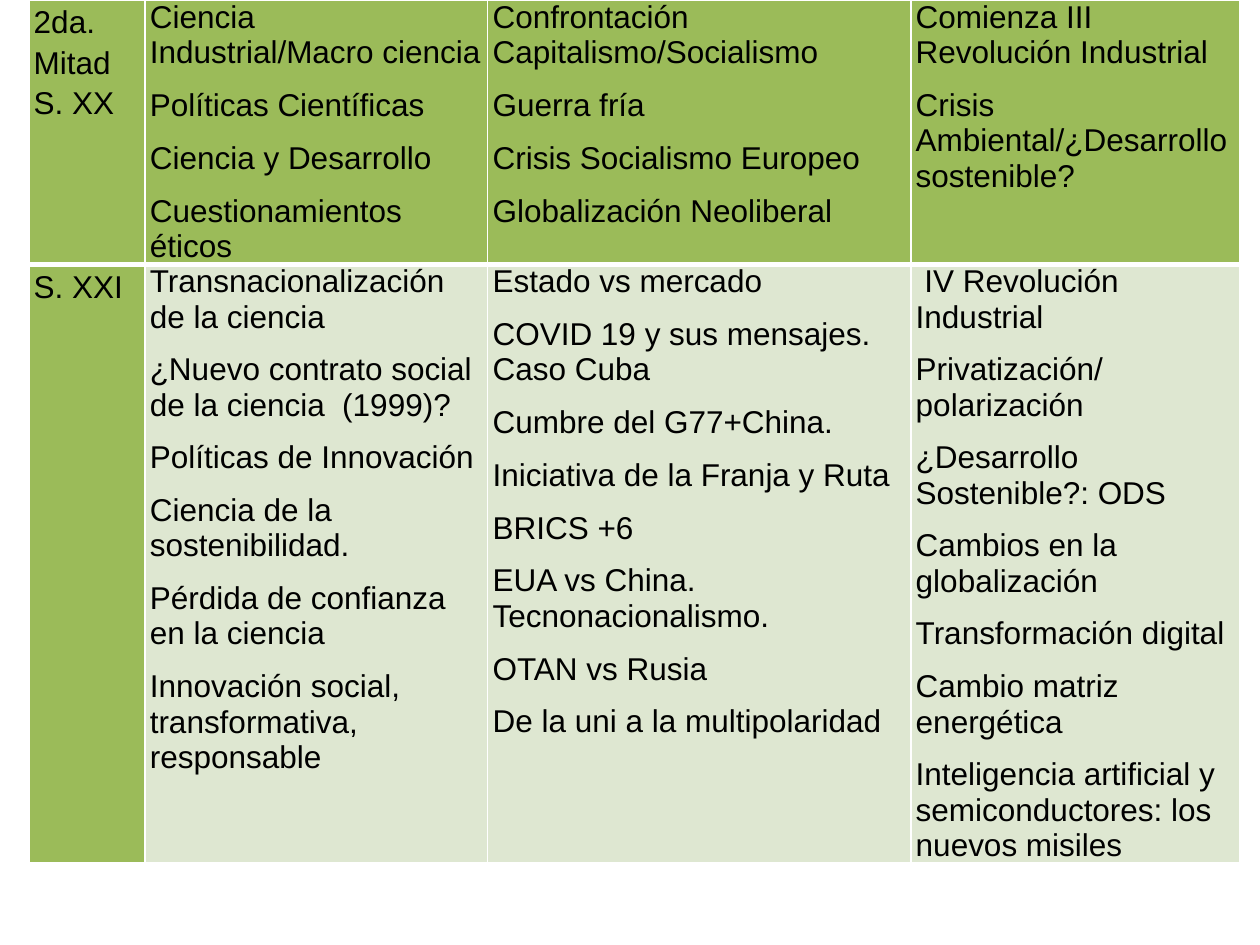
from dataclasses import dataclass

from lxml.etree import SubElement
from pptx import Presentation
from pptx.dml.color import RGBColor
from pptx.oxml.ns import qn
from pptx.util import Cm, Pt


@dataclass(frozen=True)
class Theme:
    """Colours, type and line sizes of the slide."""
    font: str = "Arial"
    size: int = 18
    text: str = "000000"
    strong: str = "9BBB59"
    pale: str = "DEE7D1"
    border: str = "FFFFFF"
    thin: int = 1
    thick: int = 3


THEME = Theme()
COL_WIDTHS = (2.34, 6.91, 8.53, 6.63)
ROW_HEIGHTS = (5.13, 11.43)
PERIODS = (
    (
        ("2da. Mitad S. XX",),
        ("Ciencia Industrial/Macro ciencia", "Políticas Científicas",
         "Ciencia y Desarrollo", "Cuestionamientos éticos"),
        ("Confrontación Capitalismo/Socialismo", "Guerra fría",
         "Crisis Socialismo Europeo", "Globalización Neoliberal"),
        ("Comienza III Revolución Industrial",
         "Crisis Ambiental/¿Desarrollo sostenible?"),
    ),
    (
        ("S. XXI",),
        ("Transnacionalización de la ciencia",
         "¿Nuevo contrato social de la ciencia  (1999)?",
         "Políticas de Innovación", "Ciencia de la sostenibilidad.",
         "Pérdida de confianza en la ciencia",
         "Innovación social, transformativa, responsable"),
        ("Estado vs mercado", "COVID 19 y sus mensajes. Caso Cuba",
         "Cumbre del G77+China.", "Iniciativa de la Franja y Ruta",
         "BRICS +6", "EUA vs China. Tecnonacionalismo.",
         "OTAN vs Rusia", "De la uni a la multipolaridad"),
        (" IV Revolución Industrial", "Privatización/polarización",
         "¿Desarrollo Sostenible?: ODS", "Cambios en la globalización",
         "Transformación digital", "Cambio matriz energética",
         "Inteligencia artificial y semiconductores: los nuevos misiles"),
    ),
)


def set_attrs(obj, values):
    """Set each named format value on an object."""
    for name, value in values.items():
        setattr(obj, name, value)


def set_borders(cell, widths):
    """Draw the cell edges with the given widths in points."""
    tc_pr = cell._tc.get_or_add_tcPr()
    for side, width in widths.items():
        ln = SubElement(tc_pr, qn(f"a:ln{side}"), w=str(Pt(width)))
        fill = SubElement(ln, qn("a:solidFill"))
        SubElement(fill, qn("a:srgbClr"), val=THEME.border)


def fill_cell(cell, lines, color, spacing, borders):
    """Write one paragraph per line and format the cell."""
    set_attrs(cell, {"margin_left": Cm(0.1), "margin_right": Cm(0.1),
                     "margin_top": 0, "margin_bottom": 0})
    set_borders(cell, borders)
    cell.fill.solid()
    cell.fill.fore_color.rgb = RGBColor.from_string(color)
    tf = cell.text_frame
    tf.text = "\n".join(lines)
    for p in tf.paragraphs:
        set_attrs(p, {"line_spacing": spacing, "space_after": Pt(10)})
        for r in p.runs:
            set_attrs(r.font, {"name": THEME.font, "size": Pt(THEME.size)})
            r.font.color.rgb = RGBColor.from_string(THEME.text)


def add_period_table(slide, left, top, width, height):
    """Place the table of historical periods in the given box."""
    s = slide.shapes.add_table(len(PERIODS), len(COL_WIDTHS),
                               left, top, width, height)
    table = s.table
    set_attrs(table, {"first_row": False, "horz_banding": False})
    for col, size in zip(table.columns, COL_WIDTHS):
        col.width = Cm(size)
    for row, size in zip(table.rows, ROW_HEIGHTS):
        row.height = Cm(size)
    s.height = height
    for i, period in enumerate(PERIODS):
        borders = dict.fromkeys("LRTB", THEME.thin)
        borders["T" if i else "B"] = THEME.thick
        for j, lines in enumerate(period):
            color = THEME.pale if i and j else THEME.strong
            spacing = 1.0 if j else 1.15
            fill_cell(table.cell(i, j), lines, color, spacing, borders)


def main():
    """Build and save the presentation."""
    prs = Presentation()
    set_attrs(prs, {"slide_width": Cm(25.4), "slide_height": Cm(19.05)})
    slide = prs.slides.add_slide(prs.slide_layouts[6])
    add_period_table(slide, Cm(0.58), Cm(0), Cm(24.41), Cm(18.42))
    prs.save("out.pptx")


if __name__ == "__main__":
    main()
